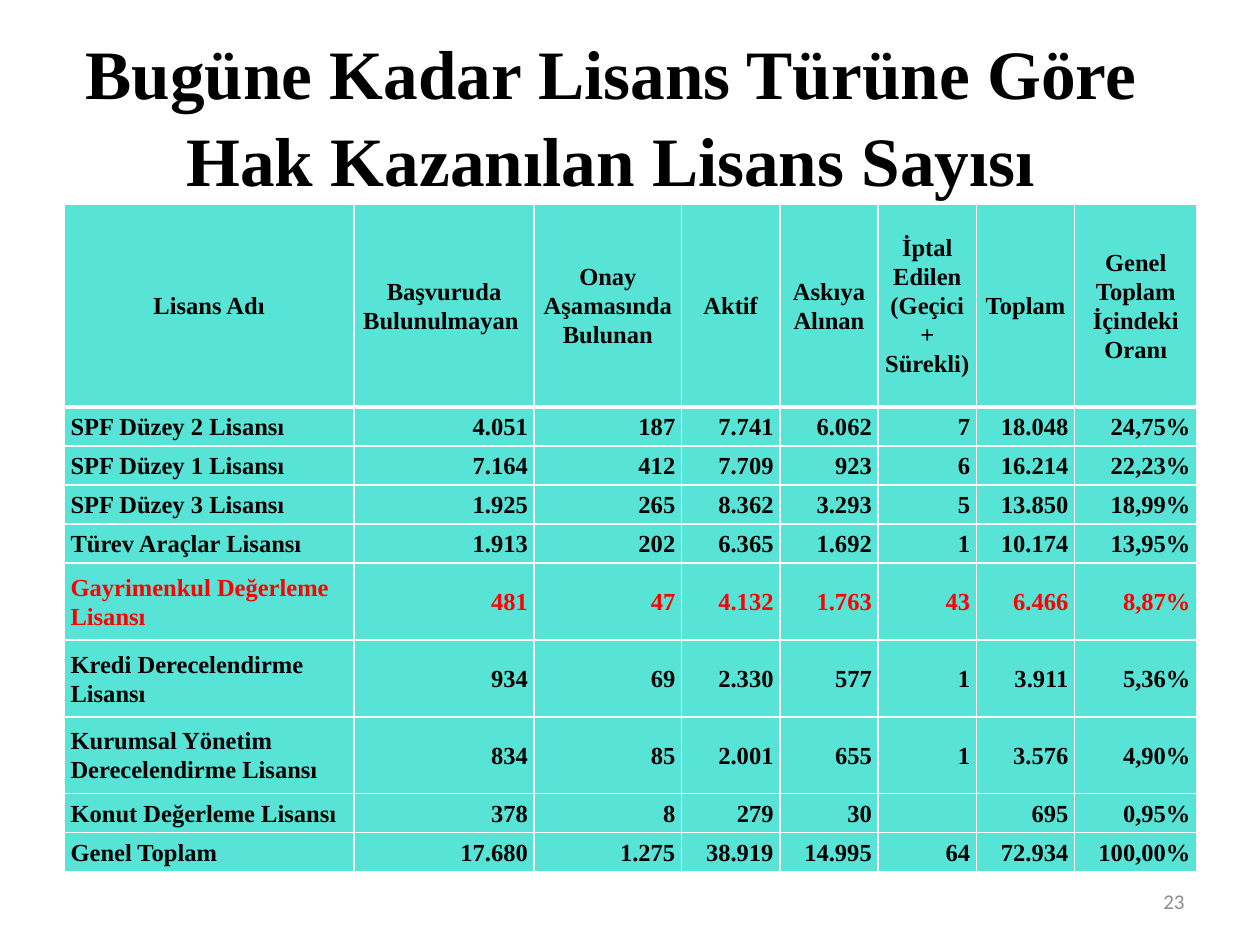
import pptx
import pptx.util
import pptx.oxml
import pptx.oxml.ns
import pptx.dml.color
import pptx.enum.text

COLORS = {"ink": "000000", "highlight": "FF0000", "cell": "57E3D6", "rule": "FFFFFF", "number": "8C8C8C"}
SERIF = "Times New Roman"
ALIGN = pptx.enum.text.PP_ALIGN
MIDDLE = pptx.enum.text.MSO_ANCHOR.MIDDLE

column_widths = [2.3, 1.43, 1.17, 0.78, 0.78, 0.78, 0.78, 0.97]
row_heights = [1.61] + [0.31] * 4 + [0.61] * 3 + [0.31] * 2
headings = ["Lisans Adı", "Başvuruda Bulunulmayan ", "Onay Aşamasında Bulunan", "Aktif", "Askıya Alınan",
            "İptal Edilen (Geçici + Sürekli)", "Toplam", "Genel Toplam İçindeki Oranı"]
licences = [
    ["SPF Düzey 2 Lisansı", "4.051", "187", "7.741", "6.062", "7", "18.048", "24,75%"],
    ["SPF Düzey 1 Lisansı", "7.164", "412", "7.709", "923", "6", "16.214", "22,23%"],
    ["SPF Düzey 3 Lisansı", "1.925", "265", "8.362", "3.293", "5", "13.850", "18,99%"],
    ["Türev Araçlar Lisansı", "1.913", "202", "6.365", "1.692", "1", "10.174", "13,95%"],
    ["Gayrimenkul Değerleme Lisansı", "481", "47", "4.132", "1.763", "43", "6.466", "8,87%"],
    ["Kredi Derecelendirme Lisansı", "934", "69", "2.330", "577", "1", "3.911", "5,36%"],
    ["Kurumsal Yönetim Derecelendirme Lisansı", "834", "85", "2.001", "655", "1", "3.576", "4,90%"],
    ["Konut Değerleme Lisansı", "378", "8", "279", "30", "", "695", "0,95%"],
    ["Genel Toplam", "17.680", "1.275", "38.919", "14.995", "64", "72.934", "100,00%"],
]
highlighted_row = 5


def add_text(paragraph, text, size, color, font=SERIF, bold=True):
    run = paragraph.add_run()
    run.text = text
    run.font.size = pptx.util.Pt(size)
    run.font.name = font
    run.font.bold = bold
    run.font.color.rgb = pptx.dml.color.RGBColor.from_string(COLORS[color])


def set_borders(cell, top, bottom):
    widths = {"lnL": 1, "lnR": 1, "lnT": top, "lnB": bottom}
    for position, (side, width) in enumerate(widths.items()):
        cell._tc.get_or_add_tcPr().insert(position, pptx.oxml.parse_xml(
            f'<a:{side} {pptx.oxml.ns.nsdecls("a")} w="{pptx.util.Pt(width)}"><a:solidFill>'
            f'<a:srgbClr val="{COLORS["rule"]}"/></a:solidFill></a:{side}>'))


deck = pptx.Presentation()
deck.slide_width = pptx.util.Inches(10)
deck.slide_height = pptx.util.Inches(7.5)
width, height = deck.slide_width, deck.slide_height
slide = deck.slides.add_slide(deck.slide_layouts[5])

title = slide.shapes.title
title.left, title.top = int(width * 0.035), int(height * 0.03)
title.width, title.height = int(width * 0.9), int(height * 0.18)
title.text_frame.vertical_anchor = MIDDLE
title.text_frame.word_wrap = True
title_line = title.text_frame.paragraphs[0]
title_line.alignment = ALIGN.CENTER
title_line.line_spacing = 1.04
add_text(title_line, "Bugüne Kadar Lisans Türüne Göre Hak Kazanılan Lisans Sayısı", 39.6, "ink")

licence_table = slide.shapes.add_table(
    len(row_heights), len(column_widths), int(width * 0.051), int(height * 0.216),
    pptx.util.Inches(sum(column_widths)), pptx.util.Inches(sum(row_heights))).table
licence_table.horz_banding = False
for column, column_width in zip(licence_table.columns, column_widths):
    column.width = pptx.util.Inches(column_width)
for row, row_height in zip(licence_table.rows, row_heights):
    row.height = pptx.util.Inches(row_height)

for r, values in enumerate([headings] + licences):
    for c, value in enumerate(values):
        cell = licence_table.cell(r, c)
        cell.fill.solid()
        cell.fill.fore_color.rgb = pptx.dml.color.RGBColor.from_string(COLORS["cell"])
        set_borders(cell, 3 if r == 1 else 1, 3 if r == 0 else 1)
        cell.vertical_anchor = MIDDLE
        cell.margin_left = cell.margin_right = pptx.util.Inches(0.05)
        cell.margin_top = cell.margin_bottom = 0
        if value:
            paragraph = cell.text_frame.paragraphs[0]
            paragraph.alignment = ALIGN.CENTER if r == 0 else ALIGN.LEFT if c == 0 else ALIGN.RIGHT
            paragraph.line_spacing = 1.07
            add_text(paragraph, value, 14, "highlight" if r == highlighted_row else "ink")

page_number = slide.shapes.add_textbox(
    int(width * 0.717), int(height * 0.927), int(width * 0.233), int(height * 0.053)).text_frame
page_number.word_wrap = True
page_number.vertical_anchor = MIDDLE
page_number.paragraphs[0].alignment = ALIGN.RIGHT
add_text(page_number.paragraphs[0], "23", 12, "number", "Calibri", False)

deck.save("out.pptx")
